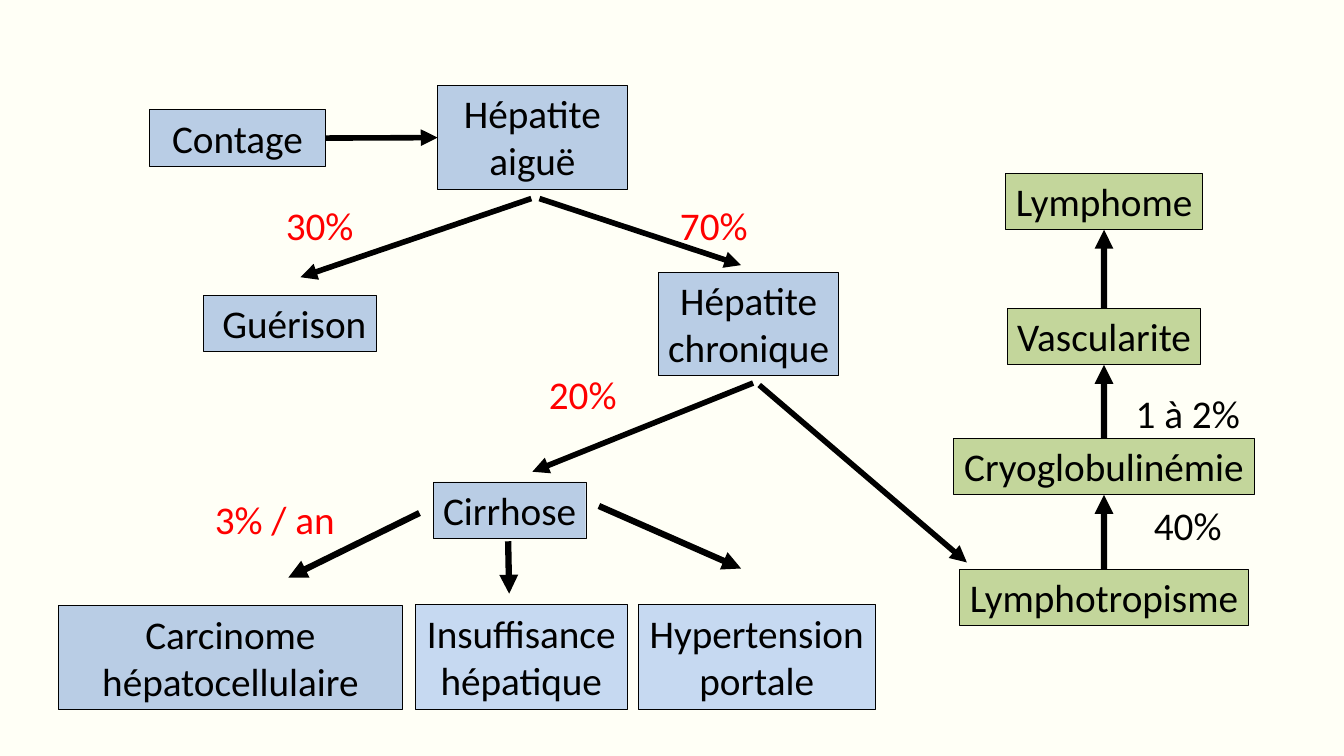
"""Build the hepatitis progression flowchart slide."""
from dataclasses import dataclass

from lxml.etree import SubElement
from pptx import Presentation
from pptx.dml.color import RGBColor
from pptx.enum.shapes import MSO_CONNECTOR as ConnectorType, MSO_SHAPE as ShapeType
from pptx.enum.text import MSO_ANCHOR as Anchor, MSO_AUTO_SIZE as AutoSize, PP_ALIGN as Align
from pptx.oxml.ns import qn
from pptx.shapes.autoshape import Shape
from pptx.shapes.connector import Connector
from pptx.slide import Slide
from pptx.util import Inches, Pt


@dataclass(frozen=True)
class Theme:
    background: RGBColor = RGBColor.from_string("FFFFF6")
    ink: RGBColor = RGBColor.from_string("000000")
    rate: RGBColor = RGBColor.from_string("FF0000")
    liver: RGBColor = RGBColor.from_string("B9CDE5")
    complication: RGBColor = RGBColor.from_string("C6D9F1")
    lymphoid: RGBColor = RGBColor.from_string("C3D69B")
    font: str = "Calibri"
    text_size: float = 28
    outline: float = 0.75
    thin_outline: float = 0.25
    arrow: float = 4
    thick_arrow: float = 4.5


THEME = Theme()
TOP, LEFT, BOTTOM, RIGHT = range(4)
ROW_HEIGHT = 0.56
TALL_HEIGHT = 1.03
LYMPHOID_CENTER = 10.95


@dataclass(frozen=True)
class Box:
    text: str
    left: float
    top: float
    width: float
    height: float = ROW_HEIGHT
    fill: RGBColor = THEME.liver
    outline: float = THEME.outline
    wrap: bool = False


@dataclass(frozen=True)
class Label:
    text: str
    left: float
    top: float
    width: float = 0.86
    color: RGBColor = THEME.rate


@dataclass(frozen=True)
class Arrow:
    start: tuple[float, float]
    end: tuple[float, float]
    weight: float = THEME.arrow


@dataclass(frozen=True)
class Link:
    source: str
    source_side: int
    target: str
    target_side: int
    weight: float = THEME.thick_arrow


def lymphoid_box(text: str, top: float, width: float) -> Box:
    """Return a green box centred on the lymphoid column."""
    return Box(text, LYMPHOID_CENTER - width / 2, top, width, fill=THEME.lymphoid)


LYMPHOID_CHAIN = [
    lymphoid_box("Lymphotropisme", 5.65, 2.87),
    lymphoid_box("Cryoglobulinémie", 4.35, 2.98),
    lymphoid_box("Vascularite", 3.06, 1.92),
    lymphoid_box("Lymphome", 1.72, 1.95),
]
BOXES = [
    Box("Contage", 1.48, 1.09, 1.75, wrap=True),
    Box("Hépatite aiguë", 4.34, 0.85, 1.88, TALL_HEIGHT, wrap=True),
    Box(" Guérison", 2.02, 2.93, 1.71),
    Box("Hépatite\nchronique", 6.53, 2.7, 1.79, TALL_HEIGHT),
    Box("Cirrhose", 4.3, 4.78, 1.51, outline=THEME.thin_outline),
    Box("Carcinome\nhépatocellulaire", 0.58, 6.01, 3.41, TALL_HEIGHT, wrap=True),
    Box("Insuffisance\nhépatique", 4.12, 6, 2.1, 1.04, THEME.complication),
    Box("Hypertension\nportale", 6.33, 6, 2.35, 1.04, THEME.complication),
    *LYMPHOID_CHAIN,
]
LABELS = [
    Label("30%", 2.74, 1.96),
    Label("70%", 6.65, 1.96),
    Label("20%", 5.35, 3.63),
    Label("3% / an", 2.03, 4.87, 1.39),
    Label("40%", 11.35, 4.93, color=THEME.ink),
    Label("1 à 2%", 11.17, 3.82, 1.22, THEME.ink),
]
ARROWS = [
    Arrow((5.27, 1.97), (2.98, 2.75)),
    Arrow((5.35, 1.97), (7.35, 2.63)),
    Arrow((7.47, 3.8), (5.28, 4.68)),
    Arrow((7.53, 3.82), (9.59, 5.58)),
    Arrow((4.16, 5.09), (2.86, 5.73), THEME.thick_arrow),
    Arrow((5.04, 5.37), (5.05, 5.89), THEME.thick_arrow),
    Arrow((5.94, 5.02), (7.35, 5.64), THEME.thick_arrow),
]
LINKS = [
    Link("Contage", RIGHT, "Hépatite aiguë", LEFT, THEME.arrow),
    *(Link(lower.text, TOP, upper.text, BOTTOM)
      for lower, upper in zip(LYMPHOID_CHAIN, LYMPHOID_CHAIN[1:])),
]


def write_text(shape: Shape, text: str, color: RGBColor, wrap: bool = False) -> None:
    """Fill a shape with centred text in the theme font."""
    text_frame = shape.text_frame
    text_frame.text = text
    text_frame.word_wrap = wrap
    text_frame.auto_size = AutoSize.SHAPE_TO_FIT_TEXT
    text_frame.vertical_anchor = Anchor.TOP
    text_frame.margin_left = text_frame.margin_right = Inches(0.09)
    text_frame.margin_top = text_frame.margin_bottom = Inches(0.04)
    for paragraph in text_frame.paragraphs:
        paragraph.alignment = Align.CENTER
        for run in paragraph.runs:
            run.font.name = THEME.font
            run.font.size = Pt(THEME.text_size)
            run.font.color.rgb = color


def draw_box(slide: Slide, box: Box) -> Shape:
    """Draw one outlined stage of the disease."""
    shape = slide.shapes.add_shape(
        ShapeType.RECTANGLE, Inches(box.left), Inches(box.top), Inches(box.width), Inches(box.height))
    shape.shadow.inherit = False
    shape.fill.solid()
    shape.fill.fore_color.rgb = box.fill
    shape.line.color.rgb = THEME.ink
    shape.line.width = Pt(box.outline)
    write_text(shape, box.text, THEME.ink, box.wrap)
    return shape


def draw_label(slide: Slide, label: Label) -> None:
    """Draw one percentage beside its arrow."""
    shape = slide.shapes.add_textbox(
        Inches(label.left), Inches(label.top), Inches(label.width), Inches(ROW_HEIGHT))
    write_text(shape, label.text, label.color)


def draw_arrow(slide: Slide, arrow: Arrow) -> Connector:
    """Draw a straight black arrow without shadow."""
    points = (Inches(value) for value in (*arrow.start, *arrow.end))
    connector = slide.shapes.add_connector(ConnectorType.STRAIGHT, *points)
    connector.line.color.rgb = THEME.ink
    connector.line.width = Pt(arrow.weight)
    SubElement(connector.line._get_or_add_ln(), qn("a:tailEnd"), type="triangle")
    SubElement(connector._element.spPr, qn("a:effectLst"))
    return connector


def draw_link(slide: Slide, link: Link, shapes: dict[str, Shape]) -> None:
    """Draw an arrow joined to the sides of two boxes."""
    connector = draw_arrow(slide, Arrow((0, 0), (0, 0), link.weight))
    connector.begin_connect(shapes[link.source], link.source_side)
    connector.end_connect(shapes[link.target], link.target_side)


def main() -> None:
    """Build and save the slide."""
    presentation = Presentation()
    presentation.slide_width = Inches(13.33)
    presentation.slide_height = Inches(7.5)
    slide = presentation.slides.add_slide(presentation.slide_layouts[6])
    slide.background.fill.solid()
    slide.background.fill.fore_color.rgb = THEME.background
    shapes = {box.text: draw_box(slide, box) for box in BOXES}
    for arrow in ARROWS:
        draw_arrow(slide, arrow)
    for link in LINKS:
        draw_link(slide, link, shapes)
    for label in LABELS:
        draw_label(slide, label)
    presentation.save("out.pptx")


if __name__ == "__main__":
    main()
